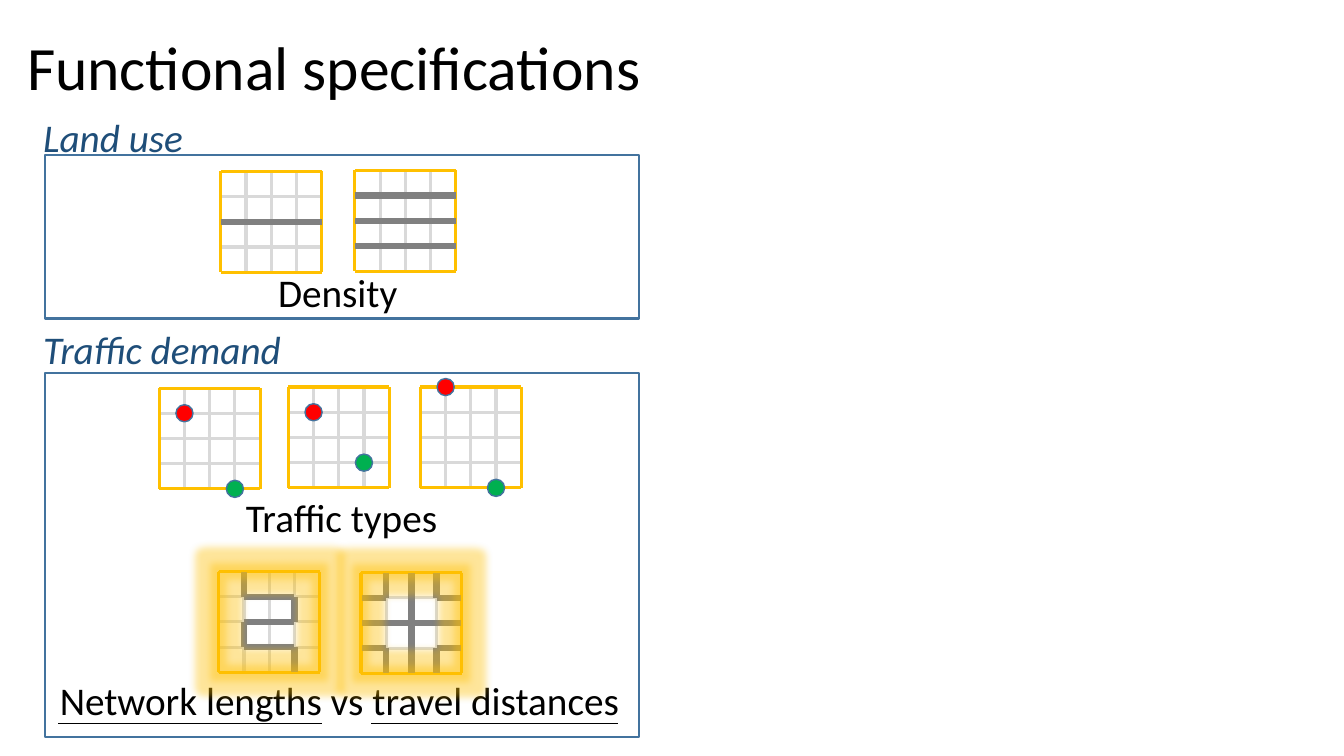
from dataclasses import dataclass

from lxml.etree import SubElement
from pptx import Presentation
from pptx.dml.color import RGBColor
from pptx.enum.shapes import MSO_CONNECTOR, MSO_SHAPE
from pptx.enum.text import MSO_ANCHOR, MSO_AUTO_SIZE, PP_ALIGN
from pptx.oxml.ns import qn
from pptx.shapes.autoshape import Shape
from pptx.shapes.connector import Connector
from pptx.util import Inches, Pt

HUES = {
    "black": "000000", "navy": "1F4E79", "blue": "43739E", "gold": "FFC000",
    "pale": "D9D9D9", "gray": "808080", "red": "FF0000", "green": "00B050",
}
CELL, COUNT, DOT = 0.25, 4, 0.17
SIDE = CELL * COUNT
ACROSS, DOWN = (0, 2, 4, 2), (2, 0, 2, 4)


@dataclass
class Label:
    text: str
    box: tuple[float, float, float, float]
    size: float = 28
    hue: str = "black"
    slant: bool = False
    wrap: bool = False
    align: PP_ALIGN = PP_ALIGN.LEFT


@dataclass
class Grid:
    left: float
    top: float
    roads: tuple[tuple[int, int, int, int], ...] = ()
    dots: tuple[tuple[int, int, str], ...] = ()
    glow: bool = False


TITLE = Label("Functional specifications", (0.17, -0.03, 11.5, 1.45), 44, wrap=True)
LABELS = [
    Label("Density", (2.66, 2.61, 1.4, 0.57)),
    Label("Network lengths vs travel distances", (0.42, 6.66, 5.89, 0.57),
          wrap=True, align=PP_ALIGN.CENTER),
    Label("Traffic types", (2.34, 4.84, 2.13, 0.57)),
    Label("Traffic demand", (0.33, 3.18, 2.6, 0.57), hue="navy", slant=True),
    Label("Land use", (0.33, 1.08, 1.6, 0.57), hue="navy", slant=True),
]
SNAKE = ((1, 1, 3, 1), (1, 2, 3, 2), (1, 3, 3, 3),
         (1, 0, 1, 1), (3, 1, 3, 2), (1, 2, 1, 3), (3, 3, 3, 4))
CROSS = (ACROSS, DOWN,
         (0, 1, 1, 1), (1, 0, 1, 1), (3, 1, 4, 1), (3, 0, 3, 1),
         (0, 3, 1, 3), (1, 3, 1, 4), (3, 3, 4, 3), (3, 3, 3, 4))
GRIDS = [
    Grid(1.58, 3.85, dots=((1, 1, "red"), (3, 4, "green"))),
    Grid(2.86, 3.84, dots=((1, 1, "red"), (3, 3, "green"))),
    Grid(4.17, 3.84, dots=((1, 0, "red"), (3, 4, "green"))),
    Grid(2.17, 5.67, roads=SNAKE, glow=True),
    Grid(3.58, 5.68, roads=CROSS, glow=True),
    Grid(2.19, 1.7, roads=(ACROSS,)),
    Grid(3.52, 1.69, roads=tuple((0, row, 4, row) for row in (1, 2, 3))),
]
PANELS = [(0.45, 3.7, 5.89, 3.61), (0.45, 1.54, 5.89, 1.62)]
RULES = [(0.58, 3.19), (3.68, 6.13)]


def paint(hue: str) -> RGBColor:
    return RGBColor.from_string(HUES[hue])


def write(shapes, label: Label) -> Shape:
    box = shapes.add_textbox(*map(Inches, label.box))
    frame = box.text_frame
    frame.text = label.text
    frame.word_wrap = label.wrap
    frame.auto_size = MSO_AUTO_SIZE.SHAPE_TO_FIT_TEXT
    line = frame.paragraphs[0]
    line.alignment = label.align
    font = line.runs[0].font
    font.name, font.size, font.italic = "Calibri", Pt(label.size), label.slant
    font.color.rgb = paint(label.hue)
    return box


def stroke(shapes, ends: tuple, hue: str, width: float) -> Connector:
    line = shapes.add_connector(MSO_CONNECTOR.STRAIGHT, *map(Inches, ends))
    line.line.color.rgb = paint(hue)
    line.line.width = Pt(width)
    SubElement(line._element.spPr, qn("a:effectLst"))
    return line


def draw(shapes, kind: MSO_SHAPE, box: tuple, hue: str, width: float,
         fill: str = "") -> Shape:
    shape = shapes.add_shape(kind, *map(Inches, box))
    shape.shadow.inherit = False
    shape.line.color.rgb = paint(hue)
    shape.line.width = Pt(width)
    if fill:
        shape.fill.solid()
        shape.fill.fore_color.rgb = paint(fill)
    else:
        shape.fill.background()
    return shape


def shine(shape: Shape) -> None:
    halo = SubElement(shape._element.spPr.find(qn("a:effectLst")), qn("a:glow"))
    halo.set("rad", str(Pt(11)))
    tint = SubElement(halo, qn("a:srgbClr"))
    tint.set("val", HUES["gold"])
    SubElement(tint, qn("a:alpha")).set("val", "40000")


def plot(shapes, grid: Grid) -> list[Connector]:
    group = shapes.add_group_shape().shapes

    def link(ends: tuple, hue: str, width: float) -> Connector:
        start = (grid.left, grid.top) * 2
        return stroke(group, tuple(a + b * CELL for a, b in zip(start, ends)),
                      hue, width)

    for hue, steps in (("pale", range(1, COUNT)), ("gold", (0, COUNT))):
        for step in steps:
            link((0, step, COUNT, step), hue, 2.25)
            link((step, 0, step, COUNT), hue, 2.25)
    roads = [link(road, "gray", 4.5) for road in grid.roads]
    for col, row, hue in grid.dots:
        left = grid.left + col * CELL - DOT / 2
        top = grid.top + row * CELL - DOT / 2
        draw(group, MSO_SHAPE.OVAL, (left, top, DOT, DOT), "blue", 1, hue)
    return roads


def frame(shapes, grid: Grid, lines: list[Connector]) -> None:
    box = (grid.left, grid.top, SIDE, SIDE)
    edge = draw(shapes, MSO_SHAPE.RECTANGLE, box, "gold", 1)
    shine(edge)
    sides = {ACROSS: (1, 3), DOWN: (0, 2)}
    for line, road in zip(lines, grid.roads):
        if road in sides:
            first, last = sides[road]
            line.begin_connect(edge, first)
            line.end_connect(edge, last)


def main() -> None:
    """Build the slide on land use and traffic demand."""
    deck = Presentation()
    deck.slide_width, deck.slide_height = Inches(13.33), Inches(7.5)
    shapes = deck.slides.add_slide(deck.slide_layouts[6]).shapes
    title = write(shapes, TITLE).text_frame
    title.auto_size = MSO_AUTO_SIZE.NONE
    title.vertical_anchor = MSO_ANCHOR.MIDDLE
    title.paragraphs[0].line_spacing = 0.9
    for label in LABELS:
        write(shapes, label)
    roads = [plot(shapes, grid) for grid in GRIDS]
    for grid, lines in zip(GRIDS, roads):
        if grid.glow:
            frame(shapes, grid, lines)
    for panel in PANELS:
        draw(shapes, MSO_SHAPE.RECTANGLE, panel, "blue", 1.5)
    for left, right in RULES:
        stroke(shapes, (left, 7.18, right, 7.18), "black", 1)
    deck.save("out.pptx")


if __name__ == "__main__":
    main()
